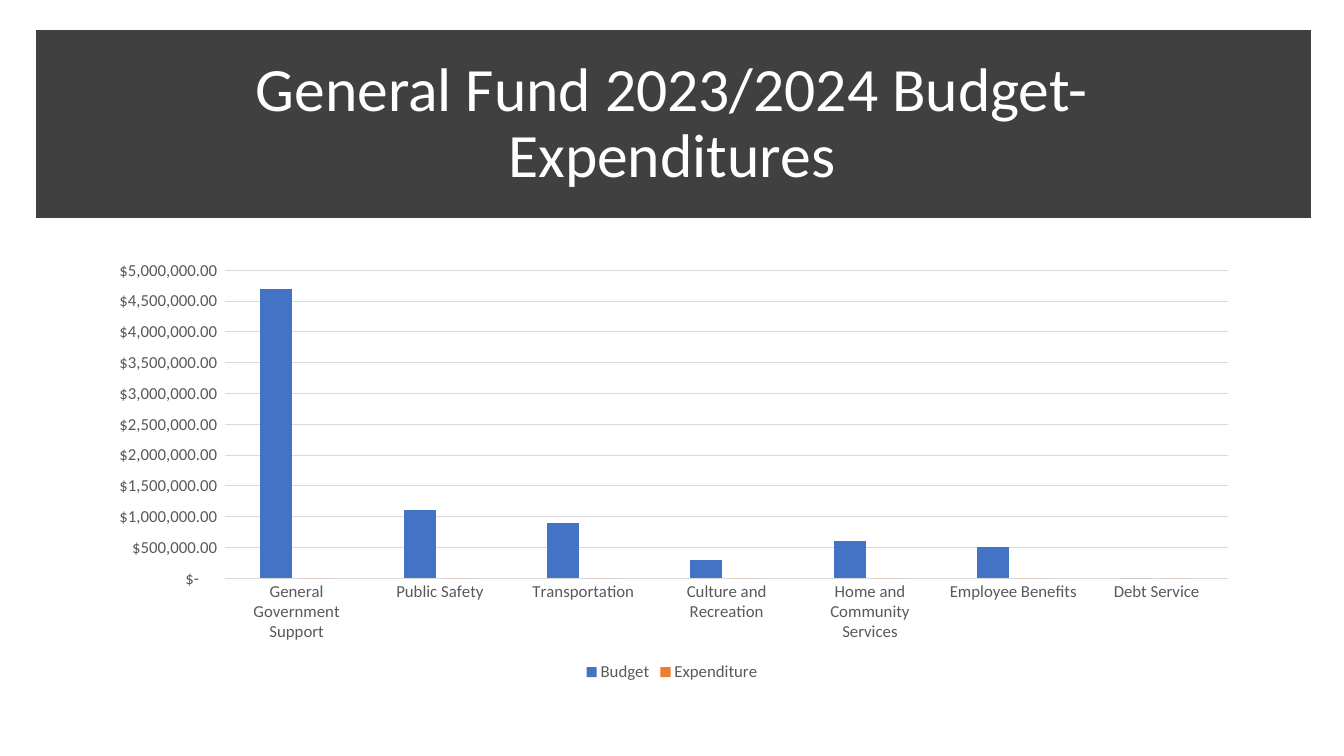
from dataclasses import dataclass

from lxml.etree import SubElement
from pptx import Presentation
from pptx.chart.axis import CategoryAxis, ValueAxis
from pptx.chart.chart import Chart
from pptx.chart.data import CategoryChartData
from pptx.dml.color import RGBColor
from pptx.enum.chart import XL_CHART_TYPE, XL_LEGEND_POSITION, XL_TICK_MARK
from pptx.enum.shapes import MSO_SHAPE
from pptx.enum.text import MSO_ANCHOR, PP_ALIGN
from pptx.oxml.ns import qn
from pptx.slide import Slide
from pptx.text.text import Font
from pptx.util import Cm, Pt

DARK = RGBColor(0x40, 0x40, 0x40)
WHITE = RGBColor(0xFF, 0xFF, 0xFF)
GREY = RGBColor(0x59, 0x59, 0x59)
PALE = RGBColor(0xD9, 0xD9, 0xD9)
BLUE = RGBColor(0x44, 0x72, 0xC4)
ORANGE = RGBColor(0xED, 0x7D, 0x31)
FACE = "Calibri"
LEFT, WIDTH = Cm(2.33), Cm(29.21)
MONEY = '_($* #,##0.00_);_($* \\(#,##0.00\\);_($* "-"??_);_(@_)'


@dataclass(frozen=True)
class Series:
    name: str
    color: RGBColor
    values: tuple[int, ...]


GROUPS = (
    "General Government Support", "Public Safety", "Transportation",
    "Culture and Recreation", "Home and Community Services",
    "Employee Benefits", "Debt Service",
)
SERIES = (
    Series("Budget", BLUE,
           (4700000, 1100000, 900000, 300000, 600000, 500000, 0)),
    Series("Expenditure", ORANGE, (0,) * len(GROUPS)),
)


def set_font(font: Font, size: int, color: RGBColor) -> None:
    font.name = FACE
    font.size = Pt(size)
    font.color.rgb = color


def add_title(slide: Slide) -> None:
    """Draw the dark band and the heading on it."""
    band = slide.shapes.add_shape(
        MSO_SHAPE.RECTANGLE, Cm(1.09), Cm(0.94), Cm(31.78), Cm(4.39))
    band.shadow.inherit = False
    band.fill.solid()
    band.fill.fore_color.rgb = DARK
    band.line.color.rgb = DARK
    band.line.width = Pt(10)
    # Square corners on the thick outline
    edge = band.element.spPr.find(qn("a:ln"))
    SubElement(edge, qn("a:miter"), lim="800000")

    box = slide.shapes.add_textbox(LEFT, Cm(1.3), WIDTH, Cm(3.68))
    frame = box.text_frame
    frame.word_wrap = True
    frame.vertical_anchor = MSO_ANCHOR.MIDDLE
    para = frame.paragraphs[0]
    para.alignment = PP_ALIGN.CENTER
    para.line_spacing = 0.9
    run = para.add_run()
    run.text = "General Fund 2023/2024 Budget- Expenditures"
    set_font(run.font, 44, WHITE)


def style_axis(axis: CategoryAxis | ValueAxis) -> None:
    axis.major_tick_mark = XL_TICK_MARK.NONE
    axis.minor_tick_mark = XL_TICK_MARK.NONE
    set_font(axis.tick_labels.font, 12, GREY)


def style_scale(axis: ValueAxis) -> None:
    """Set the money scale and its grid lines."""
    style_axis(axis)
    axis.minimum_scale = 0
    axis.maximum_scale = 5000000
    axis.major_unit = 500000
    axis.tick_labels.number_format = MONEY
    axis.tick_labels.number_format_is_linked = False
    axis.format.line.fill.background()
    grid = axis.major_gridlines.format.line
    grid.color.rgb = PALE
    grid.width = Pt(0.75)


def style_bars(chart: Chart) -> None:
    plot = chart.plots[0]
    plot.gap_width = 219
    plot.overlap = -27
    plot.vary_by_categories = False
    for bars, item in zip(plot.series, SERIES):
        bars.invert_if_negative = False
        bars.format.fill.solid()
        bars.format.fill.fore_color.rgb = item.color


def add_budget(slide: Slide) -> None:
    """Add the column chart of budget against expenditure."""
    data = CategoryChartData(number_format=MONEY)
    data.categories = GROUPS
    for item in SERIES:
        data.add_series(item.name, item.values)
    chart = slide.shapes.add_chart(
        XL_CHART_TYPE.COLUMN_CLUSTERED,
        LEFT, Cm(6.34), WIDTH, Cm(10.95), data).chart
    set_font(chart.font, 12, GREY)
    chart.has_title = False
    chart.has_legend = True
    chart.legend.position = XL_LEGEND_POSITION.BOTTOM
    chart.legend.include_in_layout = False
    set_font(chart.legend.font, 12, GREY)
    style_bars(chart)
    style_scale(chart.value_axis)
    style_axis(chart.category_axis)
    base = chart.category_axis.format.line
    base.color.rgb = PALE
    base.width = Pt(0.75)


def main() -> None:
    deck = Presentation()
    deck.slide_width = Cm(33.87)
    deck.slide_height = Cm(19.05)
    slide = deck.slides.add_slide(deck.slide_layouts[6])
    add_title(slide)
    add_budget(slide)
    deck.save("out.pptx")


if __name__ == "__main__":
    main()
